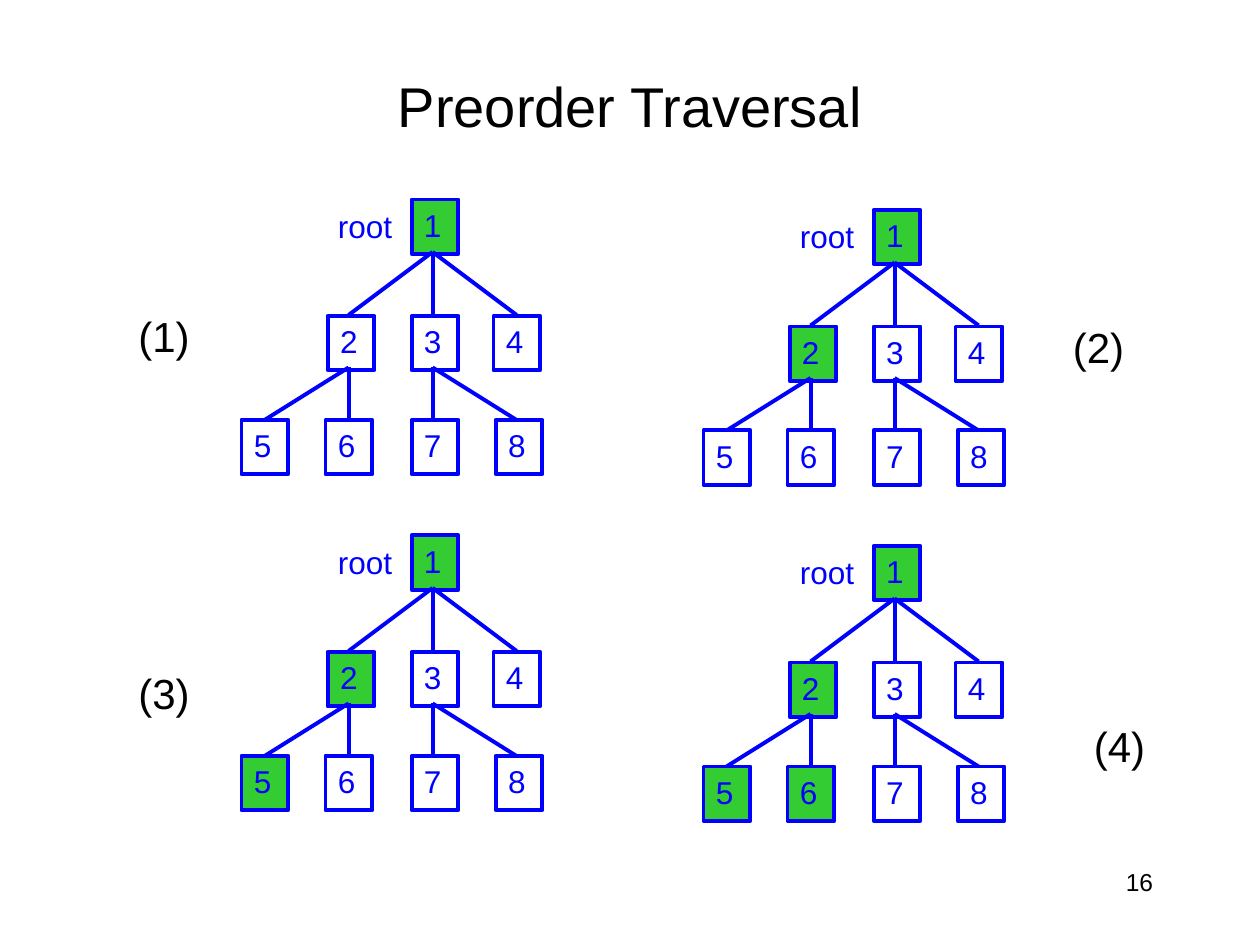
from lxml import etree
from pptx import Presentation
from pptx.dml.color import RGBColor
from pptx.enum.shapes import MSO_CONNECTOR as Connector, MSO_SHAPE as Shape
from pptx.enum.text import MSO_ANCHOR as Anchor, MSO_AUTO_SIZE as AutoSize, PP_ALIGN as Align
from pptx.oxml.ns import qn
from pptx.util import Pt

BLACK = RGBColor(0x00, 0x00, 0x00)
BLUE = RGBColor(0x00, 0x00, 0xFF)
GREEN = RGBColor(0x33, 0xCC, 0x33)

# Offsets in points from the top left corner of the root box.
NODES = {
    1: (0, 0),
    2: (-48, 66.6), 3: (0, 66.6), 4: (46.8, 66.6),
    5: (-97.2, 126), 6: (-49.2, 126), 7: (0, 126), 8: (48, 126),
}
COLUMN_STEP = 48
CENTER = 12
ROOT_EDGE_Y = (30, 66)
LEAF_EDGE_Y = (96, 126)
# Each edge: start column, end column, start and end height.
EDGES = [(0, column, ROOT_EDGE_Y) for column in (0, -1, 1)] + [
    (start, end, LEAF_EDGE_Y) for start, end in ((-1, -2), (-1, -1), (0, 0), (0, 1))
]

# Each step: root box position, visited nodes, caption, caption position.
STEPS = [
    ((235.2, 114), {1}, "(1)", (72, 174)),
    ((499.2, 120), {1, 2}, "(2)", (606, 180)),
    ((235.2, 306), {1, 2, 5}, "(3)", (72, 378)),
    ((499.2, 312), {1, 2, 5, 6}, "(4)", (618, 408)),
]


class TreeSlide:
    font = "Arial"
    line_width = Pt(2.25)
    node_size = (26.8, 31)

    def __init__(self, page):
        self.page = page

    def set_text(self, shape, text, size, color, align=Align.LEFT, anchor=Anchor.TOP):
        frame = shape.text_frame
        frame.text = text
        frame.vertical_anchor = anchor
        para = frame.paragraphs[0]
        para.alignment = align
        font = para.runs[0].font
        font.name, font.size, font.color.rgb = self.font, Pt(size), color

    def fit(self, shape):
        """Keep the text on one line and let the shape grow with it."""
        shape.text_frame.word_wrap = False
        shape.text_frame.auto_size = AutoSize.SHAPE_TO_FIT_TEXT

    def title(self, text):
        title = self.page.shapes.title
        title.left, title.top, title.width, title.height = Pt(54), Pt(30), Pt(612), Pt(60)
        self.set_text(title, text, 32, BLACK, Align.CENTER, Anchor.MIDDLE)

    def label(self, text, x, y, width, height, size, color=BLACK):
        box = self.page.shapes.add_textbox(Pt(x), Pt(y), Pt(width), Pt(height))
        self.set_text(box, text, size, color)
        self.fit(box)

    def page_number(self, number):
        box = self.page.shapes.add_textbox(Pt(516), Pt(492), Pt(150), Pt(36))
        box.text_frame.word_wrap = True
        self.set_text(box, str(number), 14, BLACK, Align.RIGHT)

    def node(self, number, x, y, visited):
        width, height = self.node_size
        box = self.page.shapes.add_shape(Shape.RECTANGLE, Pt(x), Pt(y), Pt(width), Pt(height))
        box.shadow.inherit = False
        if visited:
            box.fill.solid()
            box.fill.fore_color.rgb = GREEN
        else:
            box.fill.background()
        box.line.color.rgb = BLUE
        box.line.width = self.line_width
        self.set_text(box, str(number), 18, BLUE)
        self.fit(box)

    def edge(self, x1, y1, x2, y2):
        line = self.page.shapes.add_connector(Connector.STRAIGHT, Pt(x1), Pt(y1), Pt(x2), Pt(y2))
        line.line.color.rgb = BLUE
        line.line.width = self.line_width
        etree.SubElement(line._element.spPr, qn("a:effectLst"))

    def tree(self, left, top, visited):
        for number, (dx, dy) in NODES.items():
            self.node(number, left + dx, top + dy, number in visited)
        for start, end, (y1, y2) in EDGES:
            x1, x2 = (left + CENTER + column * COLUMN_STEP for column in (start, end))
            self.edge(x1, top + y1, x2, top + y2)
        self.label("root", left - 49.2, top + 0.6, 45.4, 28.8, 18, BLUE)


def main():
    deck = Presentation()
    deck.slide_width, deck.slide_height = Pt(720), Pt(540)
    slide = TreeSlide(deck.slides.add_slide(deck.slide_layouts.get_by_name("Title Only")))
    slide.title("Preorder Traversal")
    slide.page_number(16)
    for root, visited, caption, position in STEPS:
        slide.tree(*root, visited)
        slide.label(caption, *position, 44, 36, 24)
    deck.save("out.pptx")


if __name__ == "__main__":
    main()
